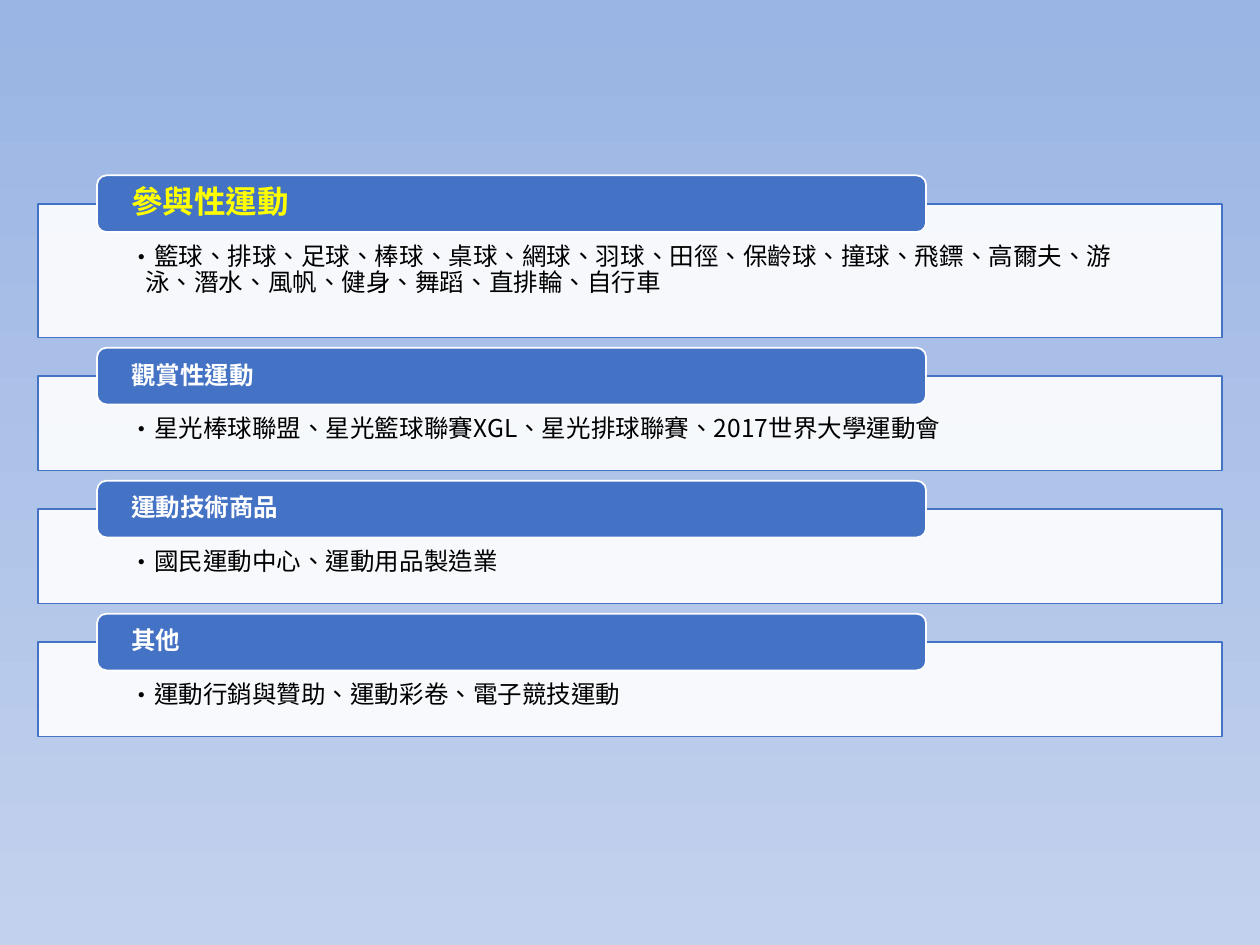
from lxml import etree
from pptx import Presentation
from pptx.dml import color
from pptx.enum import shapes, text
from pptx.oxml import ns
from pptx.util import Pt

FONT = "Noto Sans CJK SC"
BLUE, WHITE, YELLOW, BLACK = "4472C4", "FFFFFF", "FFFF00", "000000"
LEFT, TOP, WIDTH, GAP = 21.6, 116.4, 676.8, 22
CATEGORIES = [
    ("參與性運動", 18, YELLOW, 76.5,
     "籃球、排球、足球、棒球、桌球、網球、羽球、田徑、保齡球、撞球、飛鏢、高爾夫、游泳、"
     "潛水、風帆、健身、舞蹈、直排輪、自行車"),
    ("觀賞性運動", 14, WHITE, 54, "星光棒球聯盟、星光籃球聯賽XGL、星光排球聯賽、2017世界大學運動會"),
    ("運動技術商品", 14, WHITE, 54, "國民運動中心、運動用品製造業"),
    ("其他", 14, WHITE, 54, "運動行銷與贊助、運動彩卷、電子競技運動"),
]


def rgb(value):
    """Turn a hex string into a colour."""
    return color.RGBColor.from_string(value)


def add_child(parent, tag, **attributes):
    """Append a drawing element with the given attributes."""
    return etree.SubElement(parent, ns.qn(tag), attributes)


def paint_background(slide):
    """Fill the slide with a vertical blue gradient."""
    fill = slide.background.fill
    fill.gradient()
    fill.gradient_angle = 270
    for stop, (position, shade) in zip(fill.gradient_stops, [(0, "9AB5E4"), (1, "C2D1ED")]):
        stop.position = position
        stop.color.rgb = rgb(shade)


def add_panel(slide, preset, box, fill, line, margins, anchor):
    """Add a filled, outlined shape and return it."""
    panel = slide.shapes.add_shape(preset, *map(Pt, box))
    panel.shadow.inherit = False
    panel.fill.solid()
    panel.fill.fore_color.rgb = rgb(fill)
    panel.line.color.rgb = rgb(line)
    panel.line.width = Pt(1)
    side, above, below = map(Pt, margins)
    frame = panel.text_frame
    settings = {"margin_left": side, "margin_right": side, "margin_top": above,
                "margin_bottom": below, "vertical_anchor": anchor, "word_wrap": True}
    for name, value in settings.items():
        setattr(frame, name, value)
    return panel


def write(panel, words, size, shade, bold=False):
    """Write one left-aligned paragraph into a panel."""
    paragraph = panel.text_frame.paragraphs[0]
    paragraph.alignment = text.PP_ALIGN.LEFT
    paragraph.line_spacing = 0.9
    run = paragraph.add_run()
    run.text = words
    for name, value in {"size": Pt(size), "bold": bold, "name": FONT}.items():
        setattr(run.font, name, value)
    run.font.color.rgb = rgb(shade)
    properties = run._r.get_or_add_rPr()
    properties.set("lang", "zh-TW")
    add_child(properties, "a:ea", typeface=FONT)
    return paragraph


def add_category(slide, left, top, width, height, title, size, shade, examples):
    """Add a panel of examples with its title tab over the top edge."""
    body = add_panel(slide, shapes.MSO_SHAPE.RECTANGLE, (left, top, width, height),
                     WHITE, BLUE, (52.5, 23, 8), text.MSO_ANCHOR.TOP)
    solid = body.fill._xPr.find(ns.qn("a:solidFill"))
    add_child(solid[0], "a:alpha", val="90000")
    paragraph = write(body, examples, 14, BLACK)
    paragraph.level = 1
    properties = paragraph._p.get_or_add_pPr()
    indent = Pt(9)
    properties.set("marL", str(indent))
    properties.set("indent", str(-indent))
    add_child(properties, "a:buFont", typeface=FONT)
    add_child(properties, "a:buChar", char="•")

    tab = add_panel(slide, shapes.MSO_SHAPE.ROUNDED_RECTANGLE,
                    (left + width * 0.05, top - 16.2, width * 0.7, 32.4),
                    BLUE, WHITE, (18, 0, 0), text.MSO_ANCHOR.MIDDLE)
    write(tab, title, size, shade, True)


def main():
    """Build the slide of sport categories."""
    deck = Presentation()
    deck.slide_width, deck.slide_height = Pt(720), Pt(540)
    slide = deck.slides.add_slide(deck.slide_layouts[6])
    paint_background(slide)
    top = TOP
    for title, size, shade, height, examples in CATEGORIES:
        add_category(slide, LEFT, top, WIDTH, height, title, size, shade, examples)
        top += height + GAP
    deck.save("out.pptx")


if __name__ == "__main__":
    main()
